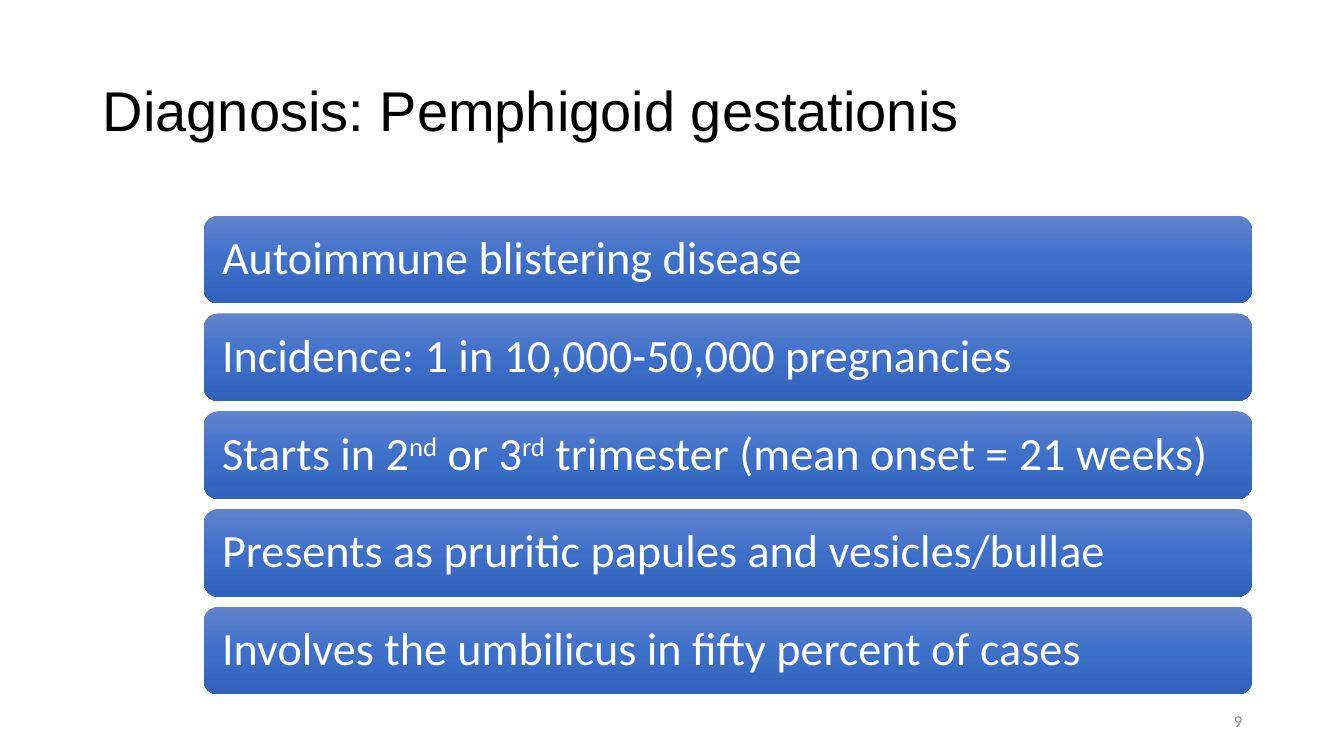
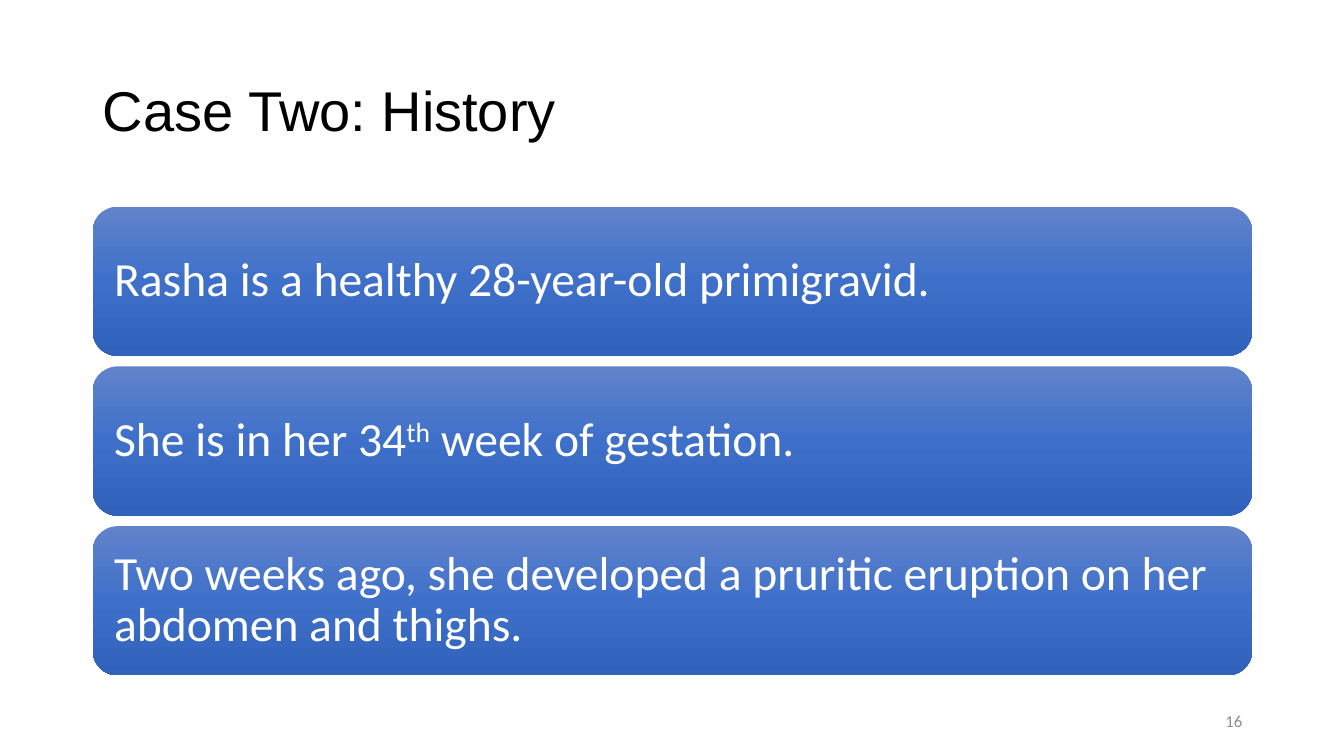
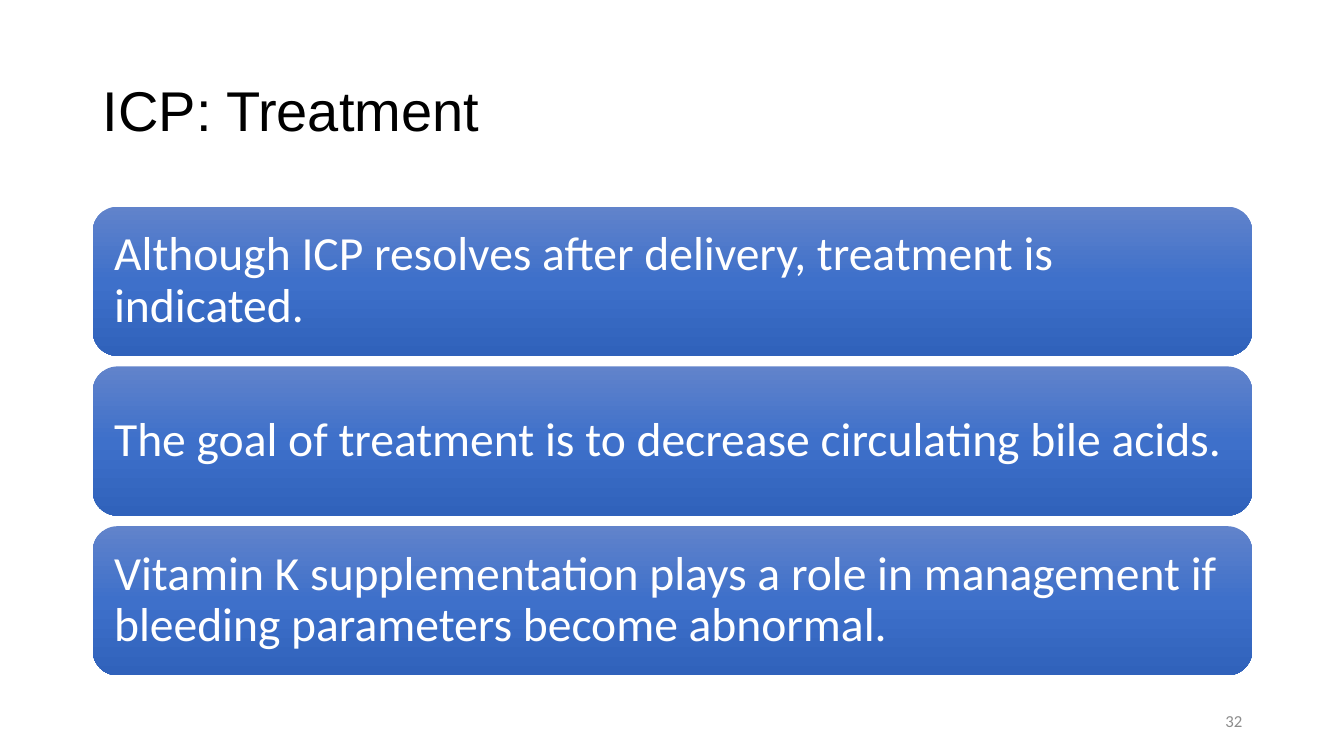
"""Build three slides of stacked gradient bars on skin conditions in pregnancy."""
import copy

import pptx
import pptx.dml.color
import pptx.enum.shapes
import pptx.enum.text
import pptx.oxml.ns
import pptx.util

Inches = pptx.util.Inches
ALIGN = pptx.enum.text.PP_ALIGN
COLORS = {
    "title": "000000",
    "bar_text": "FFFFFF",
    "number": "8C8C8C",
    "bar_top": "6183CB",
    "bar_middle": "3E70CA",
    "bar_bottom": "3062BB",
}
BAR_STOPS = [(0, "bar_top"), (0.5, "bar_middle"), (1, "bar_bottom")]
RIGHT = 12.42


def rgb(name):
    return pptx.dml.color.RGBColor.from_string(COLORS[name])


def write(sp, text, size, color, font="Calibri", align=ALIGN.LEFT, spacing=None, inset=None):
    tf = sp.text_frame
    tf.word_wrap = True
    tf.vertical_anchor = pptx.enum.text.MSO_ANCHOR.MIDDLE
    if inset is not None:
        tf.margin_left = tf.margin_right = tf.margin_top = tf.margin_bottom = Inches(inset)
    p = tf.paragraphs[0]
    p.alignment = align
    if spacing is not None:
        p.line_spacing = spacing
    for i, part in enumerate(text.split("^")):
        r = p.add_run()
        r.text = part
        r.font.size = pptx.util.Pt(size)
        r.font.name = font
        r.font.color.rgb = rgb(color)
        if i % 2:
            r.font._element.set("baseline", "30000")


class Deck:
    def __init__(self):
        self.prs = pptx.Presentation()
        self.prs.slide_width = Inches(13.33)
        self.prs.slide_height = Inches(7.5)
        self.s = None

    def slide(self, title, number):
        self.s = self.prs.slides.add_slide(self.prs.slide_layouts[5])
        sp = self.s.shapes.title
        sp.left, sp.top, sp.width, sp.height = map(Inches, (0.92, 0.4, 11.5, 1.45))
        write(sp, title, 40, "title", font="Arial", spacing=0.9)
        self.number(number)

    def number(self, number):
        sp = self.s.shapes.add_textbox(*map(Inches, (RIGHT - 3, 6.95, 3, 0.4)))
        write(sp, str(number), 12, "number", align=ALIGN.RIGHT)

    def bar(self, text, left, top, height, size):
        sp = self.s.shapes.add_shape(
            pptx.enum.shapes.MSO_SHAPE.ROUNDED_RECTANGLE,
            *map(Inches, (left, top, RIGHT - left, height)))
        sp.shadow.inherit = False
        sp.line.fill.background()
        sp.fill.gradient()
        sp.fill.gradient_angle = 270
        stops = sp._element.spPr.find(".//" + pptx.oxml.ns.qn("a:gsLst"))
        stops.insert(1, copy.deepcopy(stops[0]))
        for stop, (position, color) in zip(sp.fill.gradient_stops, BAR_STOPS):
            stop.position = position
            stop.color.rgb = rgb(color)
        write(sp, text, size, "bar_text", spacing=0.9, inset=0.14)

    def bars(self, texts, left=0.92, top=2.05, height=1.48, pitch=1.585, size=34):
        for i, text in enumerate(texts):
            self.bar(text, left, top + i * pitch, height, size)


def main():
    deck = Deck()
    deck.slide("Diagnosis: Pemphigoid gestationis", 9)
    deck.bars([
        "Autoimmune blistering disease",
        "Incidence: 1 in 10,000-50,000 pregnancies",
        "Starts in 2^nd^ or 3^rd^ trimester (mean onset = 21 weeks)",
        "Presents as pruritic papules and vesicles/bullae",
        "Involves the umbilicus in fifty percent of cases",
    ], left=2.02, top=2.14, height=0.87, pitch=0.97, size=33)

    deck.slide("Case Two: History", 16)
    deck.bars([
        "Rasha is a healthy 28-year-old primigravid.",
        "She is in her 34^th^ week of gestation.",
        "Two weeks ago, she developed a pruritic eruption on her abdomen and thighs.",
    ])

    deck.slide("ICP: Treatment", 32)
    deck.bars([
        "Although ICP resolves after delivery, treatment is indicated.",
        "The goal of treatment is to decrease circulating bile acids.",
        "Vitamin K supplementation plays a role in management if bleeding parameters become abnormal.",
    ])
    deck.prs.save("out.pptx")


if __name__ == "__main__":
    main()
